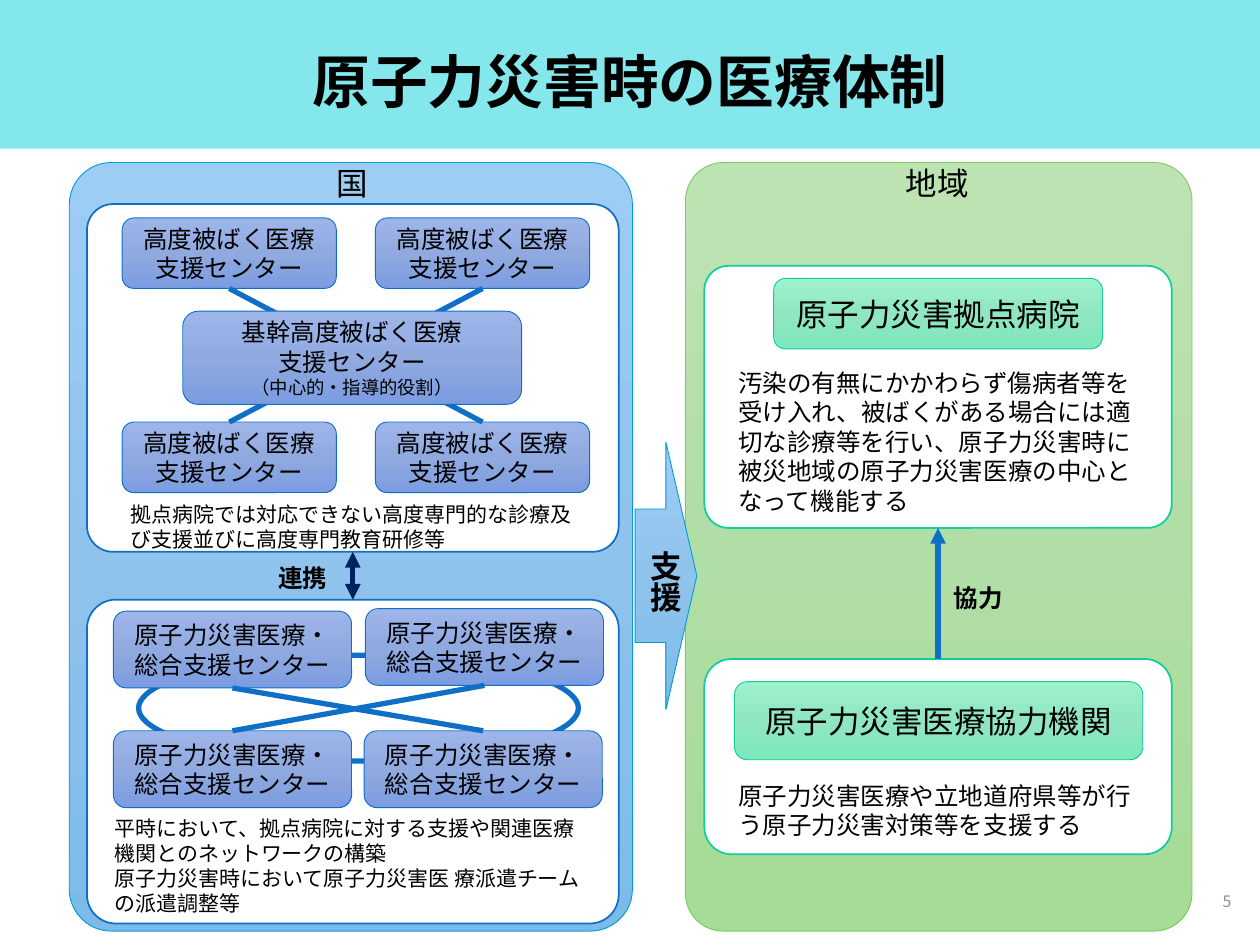
from copy import deepcopy
from dataclasses import dataclass

from lxml import etree
from pptx import Presentation
from pptx.dml.color import RGBColor
from pptx.enum import shapes, text
from pptx.oxml import ns
from pptx.util import Inches, Pt


@dataclass(frozen=True)
class Theme:
    font: str = "Noto Sans CJK JP"
    ink: str = "000000"
    grey: str = "8C8C8C"
    white: str = "FFFFFF"
    banner: str = "0BD0D9"
    blue: str = "0F6FC6"
    sky: str = "009DD9"
    navy: str = "002060"
    mint: str = "10CF9B"
    leaf: str = "7CCA62"
    sky_fade: tuple = ("9DCDF4", "90C3EC", "7CBBE9")
    leaf_fade: tuple = ("BDE3B3", "B1DDA6", "A5DC96")
    blue_fade: tuple = ("9EB5EA", "90AAE0", "7C9CE1")
    mint_fade: tuple = ("9EF1CD", "91E6C2", "7CE8BC")
    title: float = 33
    heading: float = 18
    body: float = 14
    note: float = 12
    small: float = 10.5
    number: float = 9
    leading: float = 1.2


theme = Theme()
kinds = shapes.MSO_SHAPE
anchors = text.MSO_ANCHOR
aligns = text.PP_ALIGN
rgb = RGBColor.from_string

deck = Presentation()
deck.slide_width, deck.slide_height = Inches(10), Inches(7.5)
page = deck.slides.add_slide(deck.slide_layouts[6])


def add_box(at, words="", size=theme.body, kind=None, fill=None, line=None, width=0.5,
            corner=None, align=aligns.LEFT, anchor=anchors.TOP, bold=False,
            color=theme.ink, wrap=True):
    """Add a text box, or a preset shape when a kind is given."""
    place = [Inches(value) for value in at]
    if kind is None:
        box = page.shapes.add_textbox(*place)
    else:
        box = page.shapes.add_shape(kind, *place)
        box.shadow.inherit = False
        if isinstance(fill, tuple):
            box.fill.gradient()
            box.fill.gradient_angle = 270
            first, last = box.fill.gradient_stops
            first.color.rgb, last.color.rgb = rgb(fill[0]), rgb(fill[2])
            stops = box._element.spPr.find(".//" + ns.qn("a:gsLst"))
            middle = deepcopy(stops[0])
            middle.set("pos", "50000")
            middle[0].set("val", fill[1])
            stops.insert(1, middle)
        elif fill:
            box.fill.solid()
            box.fill.fore_color.rgb = rgb(fill)
        else:
            box.fill.background()
        if line:
            box.line.color.rgb = rgb(line)
            box.line.width = Pt(width)
        else:
            box.line.fill.background()
        if corner:
            box.adjustments[0] = corner
    if words:
        frame = box.text_frame
        frame.word_wrap = wrap
        frame.vertical_anchor = anchor
        frame.text = words
        for para in frame.paragraphs:
            para.alignment = align
            para.line_spacing = Pt(size * theme.leading)
            para.font.size = Pt(size)
            para.font.bold = bold
            para.font.color.rgb = rgb(color)
            para.font.name = theme.font
            defaults = para._p.pPr.find(ns.qn("a:defRPr"))
            etree.SubElement(defaults, ns.qn("a:ea"), typeface=theme.font)
    return box


def link(start, start_side, end, end_side, color=theme.blue, arrows=()):
    """Join two boxes at the middles of their sides."""
    wire = page.shapes.add_connector(shapes.MSO_CONNECTOR.STRAIGHT, 0, 0, 0, 0)
    wire.begin_connect(start, start_side)
    wire.end_connect(end, end_side)
    wire.line.color.rgb = rgb(color)
    wire.line.width = Pt(3)
    for arrow in arrows:
        etree.SubElement(wire.line._get_or_add_ln(), ns.qn(arrow), type="triangle")
    etree.SubElement(wire._element.spPr, ns.qn("a:effectLst"))


centred = dict(align=aligns.CENTER, anchor=anchors.MIDDLE)
card = dict(kind=kinds.ROUNDED_RECTANGLE, **centred)
blue_card = dict(fill=theme.blue_fade, line=theme.blue, **card)
mint_card = dict(fill=theme.mint_fade, line=theme.mint, size=theme.heading, **card)
panel = dict(kind=kinds.ROUNDED_RECTANGLE, fill=theme.white, width=1)

# Banner, title and page number
banner = add_box((0, 0, 10, 1.18), kind=kinds.RECTANGLE, fill=theme.banner)
banner_color = banner._element.spPr.find(".//" + ns.qn("a:srgbClr"))
etree.SubElement(banner_color, ns.qn("a:alpha"), val="50000")
add_box((0.69, 0.21, 8.62, 0.85), "原子力災害時の医療体制", theme.title, bold=True, **centred)
add_box((7.62, 6.95, 2.25, 0.4), "5", theme.number, align=aligns.RIGHT,
        anchor=anchors.MIDDLE, color=theme.grey)

# Region and nation backgrounds
for left, width, fade, edge in [(5.44, 4.02, theme.leaf_fade, theme.leaf),
                                (0.55, 4.47, theme.sky_fade, theme.sky)]:
    add_box((left, 1.29, width, 6.1), kind=kinds.ROUNDED_RECTANGLE, fill=fade,
            line=edge, corner=0.075)
add_box((2.57, 1.25, 0.45, 0.4), "国", theme.heading, wrap=False)
add_box((7.09, 1.25, 0.71, 0.4), "地域", theme.heading, wrap=False)

# Nation: advanced radiation medicine centres around the core centre
advanced_panel = add_box((0.69, 1.62, 4.22, 2.76), line=theme.blue, corner=0.075, **panel)
advanced = [add_box((left, top, 1.7, 0.56), "高度被ばく医療\n支援センター", **blue_card)
            for top in (1.73, 3.35) for left in (0.97, 2.98)]
link(advanced[1], 2, advanced[2], 0)
link(advanced[0], 2, advanced[3], 0)
core = add_box((1.45, 2.47, 2.69, 0.74),
               "基幹高度被ばく医療\n支援センター\n（中心的・指導的役割）", **blue_card)
role = core.text_frame.paragraphs[2]
role.font.size = Pt(theme.small)
role.line_spacing = Pt(theme.small * theme.leading)
add_box((0.94, 3.93, 3.72, 0.5),
        "拠点病院では対応できない高度専門的な診療及び支援並びに高度専門教育研修等", theme.note)

# Nation: network of general support centres
network_panel = add_box((0.69, 4.76, 4.22, 2.57), line=theme.blue, corner=0.089, **panel)
add_box((1.1, 5.2, 3.49, 0.84), kind=kinds.OVAL, line=theme.blue, width=3)
general = [add_box((left, top, 1.89, 0.61), "原子力災害医療・\n総合支援センター", **blue_card)
           for left, top in [(0.9, 4.85), (2.9, 4.83), (0.9, 5.8), (2.89, 5.8)]]
link(general[1], 2, general[2], 0)
link(general[0], 2, general[3], 0)
add_box((0.81, 6.42, 3.97, 0.91),
        "平時において、拠点病院に対する支援や関連医療機関とのネットワークの構築\n"
        "原子力災害時において原子力災害医 療派遣チームの派遣調整等", theme.note)

# Region: base hospital and cooperating institutions
hospital_panel = add_box((5.59, 2.11, 3.71, 2.08), line=theme.mint, corner=0.092, **panel)
add_box((6.14, 2.21, 2.61, 0.56), "原子力災害拠点病院", **mint_card)
add_box((5.76, 2.87, 3.43, 1.28),
        "汚染の有無にかかわらず傷病者等を受け入れ、被ばくがある場合には適切な診療等を行い、"
        "原子力災害時に被災地域の原子力災害医療の中心となって機能する")
partner_panel = add_box((5.59, 5.23, 3.71, 1.55), line=theme.mint, corner=0.139, **panel)
add_box((5.83, 5.41, 3.24, 0.62), "原子力災害医療協力機関", **mint_card)
add_box((5.76, 6.15, 3.43, 0.57),
        "原子力災害医療や立地道府県等が行う原子力災害対策等を支援する")

# Relations: coordination, support and cooperation
link(advanced_panel, 2, network_panel, 0, theme.navy, ("a:headEnd", "a:tailEnd"))
add_box((2.11, 4.42, 0.59, 0.34), "連携", bold=True)
add_box((5.04, 3.51, 0.49, 2.12), kind=kinds.RIGHT_ARROW, fill=theme.sky_fade, line=theme.sky)
support = add_box((4.98, 4.27, 0.5, 0.61), "支援", theme.heading, bold=True, wrap=False)
support.text_frame._txBody.bodyPr.set("vert", "eaVert")
link(partner_panel, 0, hospital_panel, 2, arrows=("a:tailEnd",))
add_box((7.47, 4.58, 0.59, 0.34), "協力", bold=True, wrap=False)

deck.save("out.pptx")
